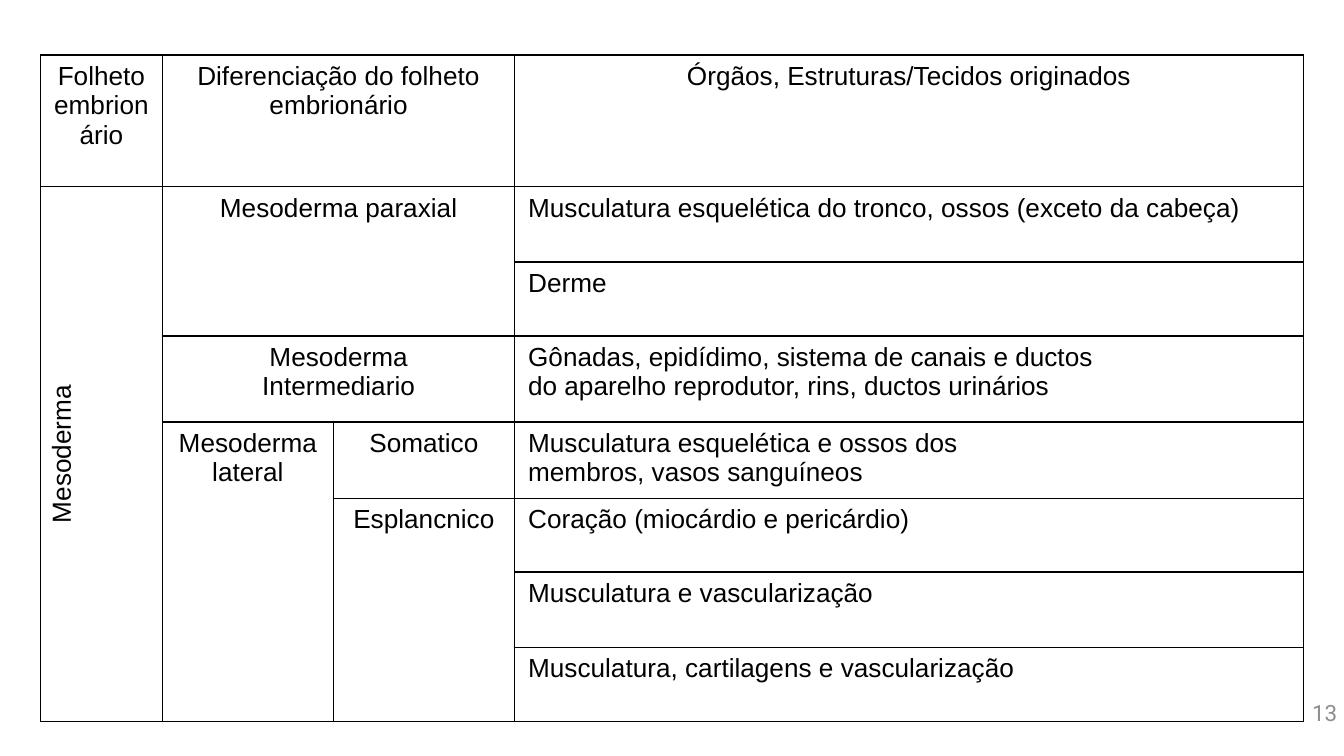
import pptx
import pptx.util
import pptx.dml.color
import pptx.enum.text
from lxml import etree
from pptx.oxml.ns import qn

Inches = pptx.util.Inches
ALIGN = pptx.enum.text.PP_ALIGN
COLORS = {"ink": "000000", "number": "8D8E8F", "paper": "FFFFFF"}
COLUMN_WIDTHS = [0.91, 1.27, 1.35, 5.87]
ROW_HEIGHTS = [0.98, 0.56, 0.55, 0.64, 0.56, 0.55, 0.56, 0.55]

# (row, column, row span, column span, lines)
HEADINGS = [
    (0, 0, 1, 1, ["Folheto", "embrionário"]),
    (0, 1, 1, 2, ["Diferenciação do folheto", "embrionário"]),
    (0, 3, 1, 1, ["Órgãos, Estruturas/Tecidos originados"]),
    (1, 0, 7, 1, ["Mesoderma"]),
    (1, 1, 2, 2, ["Mesoderma paraxial"]),
    (3, 1, 1, 2, ["Mesoderma", "Intermediario"]),
    (4, 1, 4, 1, ["Mesoderma", "lateral"]),
    (4, 2, 1, 1, ["Somatico"]),
    (5, 2, 3, 1, ["Esplancnico"]),
]
ORGANS = [
    ["Musculatura esquelética do tronco, ossos (exceto da cabeça)"],
    ["Derme"],
    ["Gônadas, epidídimo, sistema de canais e ductos",
     "do aparelho reprodutor, rins, ductos urinários"],
    ["Musculatura esquelética e ossos dos", "membros, vasos sanguíneos"],
    ["Coração (miocárdio e pericárdio)"],
    ["Musculatura e vascularização"],
    ["Musculatura, cartilagens e vascularização"],
]


def rgb(name):
    """Return a named colour."""
    return pptx.dml.color.RGBColor.from_string(COLORS[name])


def write_lines(frame, lines, size=14, font="Arial", color="ink", align=ALIGN.CENTER):
    """Write one formatted paragraph for each line."""
    for index, line in enumerate(lines):
        para = frame.add_paragraph() if index else frame.paragraphs[0]
        para.alignment = align
        span = para.add_run()
        span.text = line
        span.font.size = pptx.util.Pt(size)
        span.font.name = font
        span.font.color.rgb = rgb(color)


def style_cell(cell):
    """Give a cell a plain fill and thin borders on every side."""
    properties = cell._tc.get_or_add_tcPr()
    for side in ("lnL", "lnR", "lnT", "lnB"):
        line = etree.SubElement(properties, qn("a:" + side), w=str(pptx.util.Pt(0.75)))
        fill = etree.SubElement(line, qn("a:solidFill"))
        etree.SubElement(fill, qn("a:srgbClr"), val=COLORS["ink"])
    cell.fill.solid()
    cell.fill.fore_color.rgb = rgb("paper")


def add_germ_layer_table(page):
    """Add the table of mesoderm derivatives."""
    frame = page.shapes.add_table(
        len(ROW_HEIGHTS), len(COLUMN_WIDTHS), Inches(0.3), Inches(0.41),
        Inches(sum(COLUMN_WIDTHS)), Inches(sum(ROW_HEIGHTS)))
    table = frame.table
    table.first_row = table.horz_banding = False
    for column, width in zip(table.columns, COLUMN_WIDTHS):
        column.width = Inches(width)
    for row, height in zip(table.rows, ROW_HEIGHTS):
        row.height = Inches(height)
    for cell in table.iter_cells():
        style_cell(cell)
    for row, column, row_span, column_span, lines in HEADINGS:
        cell = table.cell(row, column)
        if row_span * column_span > 1:
            cell.merge(table.cell(row + row_span - 1, column + column_span - 1))
        write_lines(cell.text_frame, lines)
    for row, lines in enumerate(ORGANS, start=1):
        write_lines(table.cell(row, 3).text_frame, lines, align=ALIGN.JUSTIFY)
    table.cell(1, 0)._tc.get_or_add_tcPr().set("vert", "vert270")


def add_page_number(page, number):
    """Add the page number in the lower right corner."""
    box = page.shapes.add_textbox(Inches(9.44), Inches(5.2), Inches(0.51), Inches(0.43))
    frame = box.text_frame
    frame.word_wrap = True
    frame.margin_left = frame.margin_right = frame.margin_top = frame.margin_bottom = 0
    write_lines(frame, [number], size=12, font="Roboto", color="number", align=ALIGN.RIGHT)


def main():
    """Build and save the 16:9 slide."""
    deck = pptx.Presentation()
    deck.slide_width = Inches(10)
    deck.slide_height = deck.slide_width * 9 // 16
    page = deck.slides.add_slide(deck.slide_layouts[6])
    add_page_number(page, "13")
    add_germ_layer_table(page)
    deck.save("out.pptx")


main()
